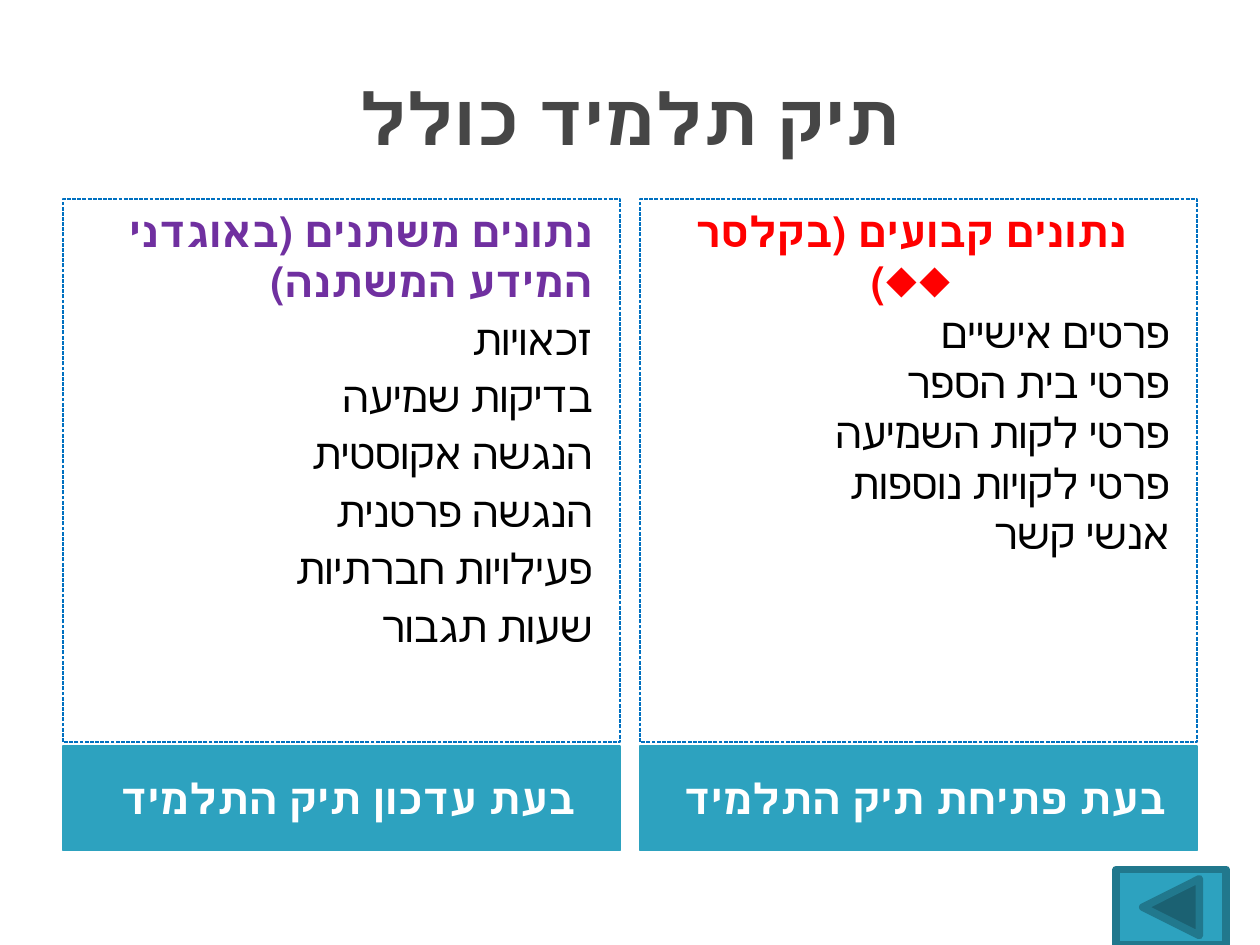
from pptx import Presentation
from pptx.dml.color import RGBColor
from pptx.enum import dml, shapes, text
from pptx.util import Inches, Pt

FONT = "Courier New"
TEAL, BORDER, WHITE, BLACK = "2DA2BF", "0070C0", "FFFFFF", "000000"
CENTER, RIGHT = text.PP_ALIGN.CENTER, text.PP_ALIGN.RIGHT

# Content
TITLE = "תיק תלמיד כולל"
COLUMNS = [
    {
        "left": 0.5,
        "heading": "נתונים משתנים (באוגדני המידע המשתנה)",
        "color": "7030A0", "align": RIGHT, "before": 4,
        "items": ["זכאויות", "בדיקות שמיעה", "הנגשה אקוסטית",
                  "הנגשה פרטנית", "פעילויות חברתיות", "שעות תגבור"],
        "label": "בעת עדכון תיק התלמיד",
    },
    {
        "left": 5.08,
        "heading": "נתונים קבועים (בקלסר ◆◆)",
        "color": "FF0000", "align": CENTER, "before": 0,
        "items": ["פרטים אישיים", "פרטי בית הספר", "פרטי לקות השמיעה",
                  "פרטי לקויות נוספות", "אנשי קשר"],
        "label": "בעת פתיחת תיק התלמיד",
    },
]
COLUMN_WIDTH = 4.42


def rgb(value):
    return RGBColor.from_string(value)


def write(frame, words, first=True, size=24, color=BLACK, bold=False,
          align=RIGHT, before=0, indent=0):
    """Write one right-to-left paragraph into a text frame."""
    paragraph = frame.paragraphs[0] if first else frame.add_paragraph()
    paragraph.alignment = align
    paragraph.space_before = Pt(0 if first else before)
    properties = paragraph._p.get_or_add_pPr()
    properties.set("rtl", "1")
    properties.set("marL", str(Inches(indent)))
    properties.set("indent", "0")
    run = paragraph.add_run()
    run.text = words
    run.font.name = FONT
    run.font.size = Pt(size)
    run.font.bold = bold
    run.font.color.rgb = rgb(color)


def add_box(slide, kind, left, top, width, height, fill=None, line=TEAL,
            weight=0.75, dash=None):
    shape = slide.shapes.add_shape(
        kind, Inches(left), Inches(top), Inches(width), Inches(height))
    shape.shadow.inherit = False
    if fill:
        shape.fill.solid()
        shape.fill.fore_color.rgb = rgb(fill)
    else:
        shape.fill.background()
    shape.line.color.rgb = rgb(line)
    shape.line.width = Pt(weight)
    if dash:
        shape.line.dash_style = dash
    shape.text_frame.word_wrap = True
    return shape


def add_column(slide, column):
    rectangle = shapes.MSO_SHAPE.RECTANGLE

    # Label under the column
    label = add_box(slide, rectangle, column["left"], 5.92, COLUMN_WIDTH, 0.83,
                    fill=TEAL)
    frame = label.text_frame
    frame.vertical_anchor = text.MSO_ANCHOR.MIDDLE
    frame.margin_left = Inches(0.2)
    write(frame, column["label"], color=WHITE, bold=True, align=CENTER)

    # Dashed list box
    panel = add_box(slide, rectangle, column["left"], 1.58, COLUMN_WIDTH, 4.31,
                    line=BORDER, dash=dml.MSO_LINE.SQUARE_DOT)
    frame = panel.text_frame
    frame.vertical_anchor = text.MSO_ANCHOR.TOP
    write(frame, column["heading"], color=column["color"], bold=True,
          align=column["align"], indent=0.12)
    for item in column["items"]:
        write(frame, item, first=False, before=column["before"], indent=0.12)


def main():
    presentation = Presentation()
    presentation.slide_width = Inches(10)
    presentation.slide_height = Inches(7.5)
    slide = presentation.slides.add_slide(presentation.slide_layouts[5])

    # Title
    title = slide.shapes.title
    title.left, title.top = Inches(0.5), Inches(0.3)
    title.width, title.height = Inches(9), Inches(1.25)
    title.text_frame.vertical_anchor = text.MSO_ANCHOR.MIDDLE
    write(title.text_frame, TITLE, size=41, color="464646", bold=True,
          align=CENTER)

    for column in COLUMNS:
        add_column(slide, column)

    # Back button
    add_box(slide, shapes.MSO_SHAPE.ACTION_BUTTON_BACK_OR_PREVIOUS,
            8.86, 6.9, 0.87, 0.6, fill=TEAL, line="21788D", weight=4.33)

    presentation.save("out.pptx")


if __name__ == "__main__":
    main()
